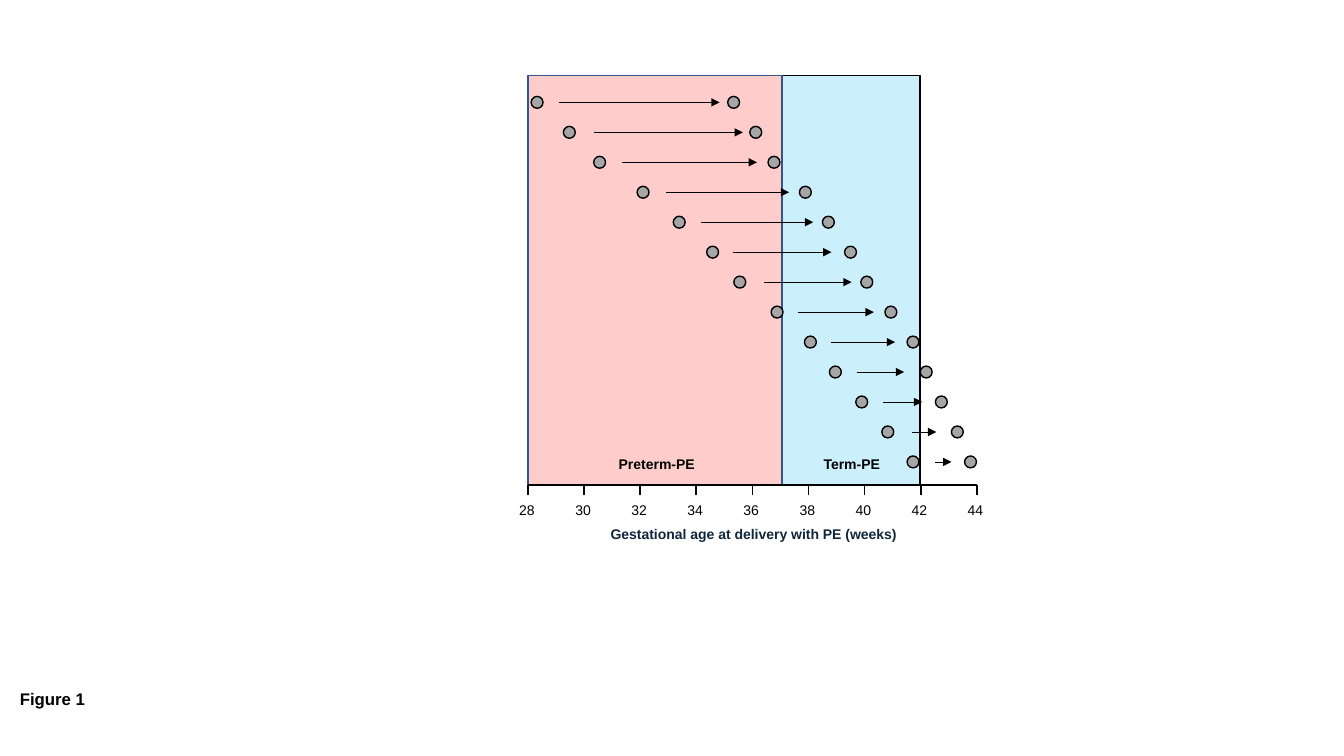
"""Build the slide on gestational age at delivery with pre-eclampsia (PE)."""
from lxml.etree import SubElement
from pptx import Presentation
from pptx.dml.color import RGBColor
from pptx.enum.shapes import MSO_CONNECTOR, MSO_SHAPE
from pptx.enum.text import PP_ALIGN
from pptx.oxml.ns import qn
from pptx.util import Cm, Pt

THEME = {
    "font": "Arial",
    "black": RGBColor.from_string("000000"),
    "title": RGBColor.from_string("0F273D"),
    "dot": RGBColor.from_string("A6A6A6"),
    "term": RGBColor.from_string("00B0F0"),
    "preterm": RGBColor.from_string("FF0000"),
    "preterm_line": RGBColor.from_string("325491"),
    "label_size": Pt(10),
    "caption_size": Pt(12),
}
FIRST_WEEK, LAST_WEEK, WEEK = 28, 44, 0.7065
LEFT, TOP, AXIS = 13.31, 1.9, 12.22
FIRST_ROW, ROW_STEP, DOT = 2.58, 0.755, 0.3
TICK, TICK_LABEL = 0.25, 0.8

# Weeks: first dot, arrow start, arrow end, second dot
SHIFTS = [
    (28.32, 29.11, 34.83, 35.33),
    (29.47, 30.34, 35.66, 36.12),
    (30.55, 31.34, 36.16, 36.77),
    (32.10, 32.93, 37.31, 37.89),
    (33.39, 34.18, 38.17, 38.71),
    (34.58, 35.30, 38.82, 39.50),
    (35.55, 36.41, 39.54, 40.08),
    (36.88, 37.63, 40.33, 40.94),
    (38.07, 38.82, 41.09, 41.73),
    (38.96, 39.72, 41.41, 42.20),
    (39.90, 40.65, 42.06, 42.74),
    (40.83, 41.70, 42.56, 43.31),
    (41.73, 42.52, 43.10, 43.78),
]

prs = Presentation()
prs.slide_width, prs.slide_height = Cm(33.87), Cm(19.05)
s = prs.slides.add_slide(prs.slide_layouts[6])


def add_text(text, x, y, w, h, size=THEME["label_size"], color=THEME["black"], bold=True,
             align=PP_ALIGN.CENTER, inset=(0.25, 0.13), spacing=1.0):
    tf = s.shapes.add_textbox(Cm(x), Cm(y), Cm(w), Cm(h)).text_frame
    tf.word_wrap = True
    tf.margin_left = tf.margin_right = Cm(inset[0])
    tf.margin_top = tf.margin_bottom = Cm(inset[1])
    p = tf.paragraphs[0]
    p.alignment, p.line_spacing = align, spacing
    r = p.add_run()
    r.text = text
    r.font.name, r.font.size, r.font.bold = THEME["font"], size, bold
    r.font.color.rgb = color


def add_line(x1, y1, x2, y2, width, arrow=False):
    ln = s.shapes.add_connector(MSO_CONNECTOR.STRAIGHT, Cm(x1), Cm(y1), Cm(x2), Cm(y2))
    ln.line.color.rgb, ln.line.width = THEME["black"], Pt(width)
    if arrow:
        SubElement(ln.line._get_or_add_ln(), qn("a:tailEnd"), type="triangle")
    SubElement(ln._element.spPr, qn("a:effectLst"))


add_text("Figure 1", 0.25, 17.22, 2.26, 0.76, size=THEME["caption_size"], align=PP_ALIGN.LEFT)

for start, end, fill, line in [
    (37.06, 41.98, "term", "black"),
    (28, 37.06, "preterm", "preterm_line"),
]:
    sp = s.shapes.add_shape(MSO_SHAPE.RECTANGLE, Cm(LEFT + (start - FIRST_WEEK) * WEEK), Cm(TOP),
                            Cm((end - start) * WEEK), Cm(AXIS - TOP))
    sp.shadow.inherit = False
    sp.fill.solid()
    sp.fill.fore_color.rgb = THEME[fill]
    color = sp._element.spPr.find(qn("a:solidFill")).find(qn("a:srgbClr"))
    SubElement(color, qn("a:alpha"), val="20000")
    sp.line.color.rgb, sp.line.width = THEME[line], Pt(1)

add_line(LEFT, AXIS, LEFT + (LAST_WEEK - FIRST_WEEK) * WEEK, AXIS, 1.25)
for week in range(FIRST_WEEK, LAST_WEEK + 1, 2):
    x = LEFT + (week - FIRST_WEEK) * WEEK
    add_line(x, AXIS, x, AXIS + TICK, 1.25)
    add_text(str(week), x - 0.03 - TICK_LABEL / 2, 12.65, TICK_LABEL, 0.43, bold=False, inset=(0, 0))
add_text("Gestational age at delivery with PE (weeks)", 14.28, 13.21, 9.42, 0.53,
         color=THEME["title"], inset=(0.15, 0.08), spacing=0.9)

for row, weeks in enumerate(SHIFTS):
    y = FIRST_ROW + row * ROW_STEP
    before, tail, head, after = [LEFT + (week - FIRST_WEEK) * WEEK for week in weeks]
    add_line(tail, y, head, y, 0.5, arrow=True)
    for x in (before, after):
        sp = s.shapes.add_shape(MSO_SHAPE.OVAL, Cm(x - DOT / 2), Cm(y - DOT / 2), Cm(DOT), Cm(DOT))
        sp.shadow.inherit = False
        sp.fill.solid()
        sp.fill.fore_color.rgb = THEME["dot"]
        sp.line.color.rgb, sp.line.width = THEME["black"], Pt(1)

add_text("Preterm-PE", 14.99, 11.35, 3.12, 0.69)
add_text("Term-PE", 20.32, 11.35, 2.29, 0.69)

prs.save("out.pptx")
